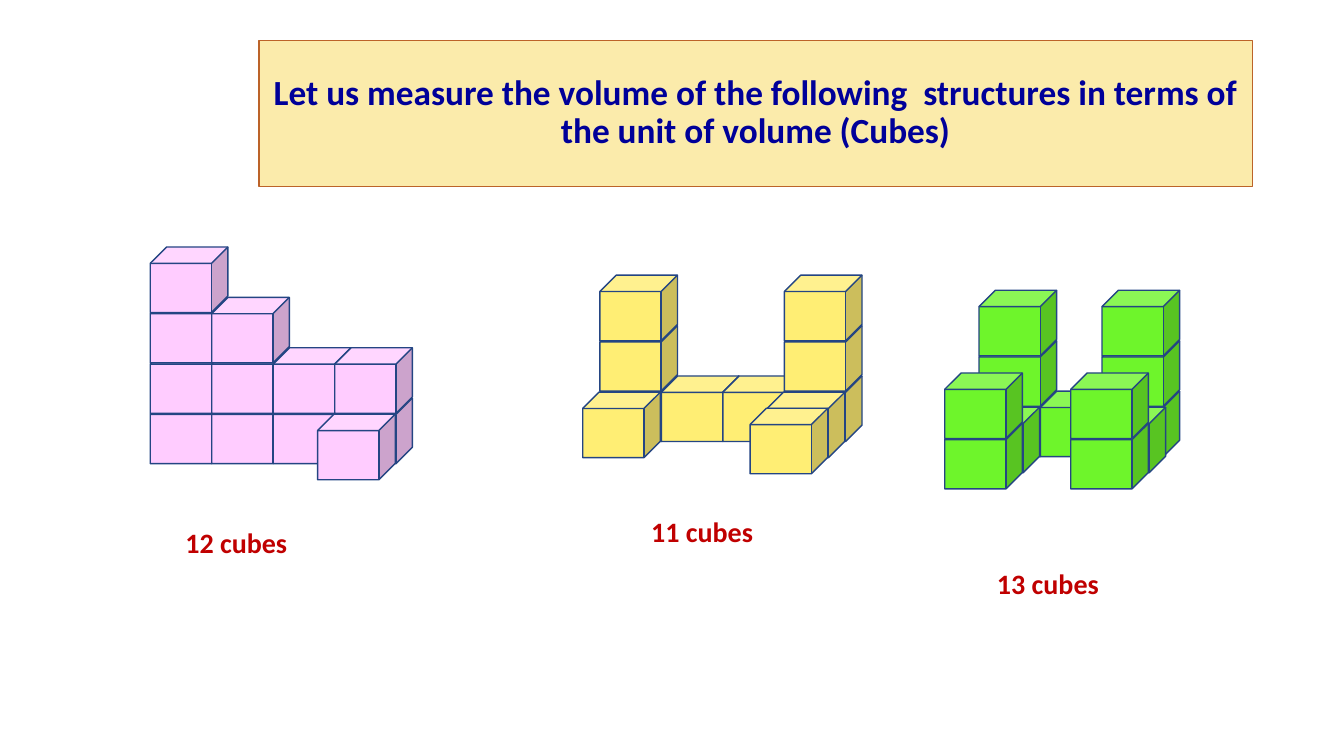
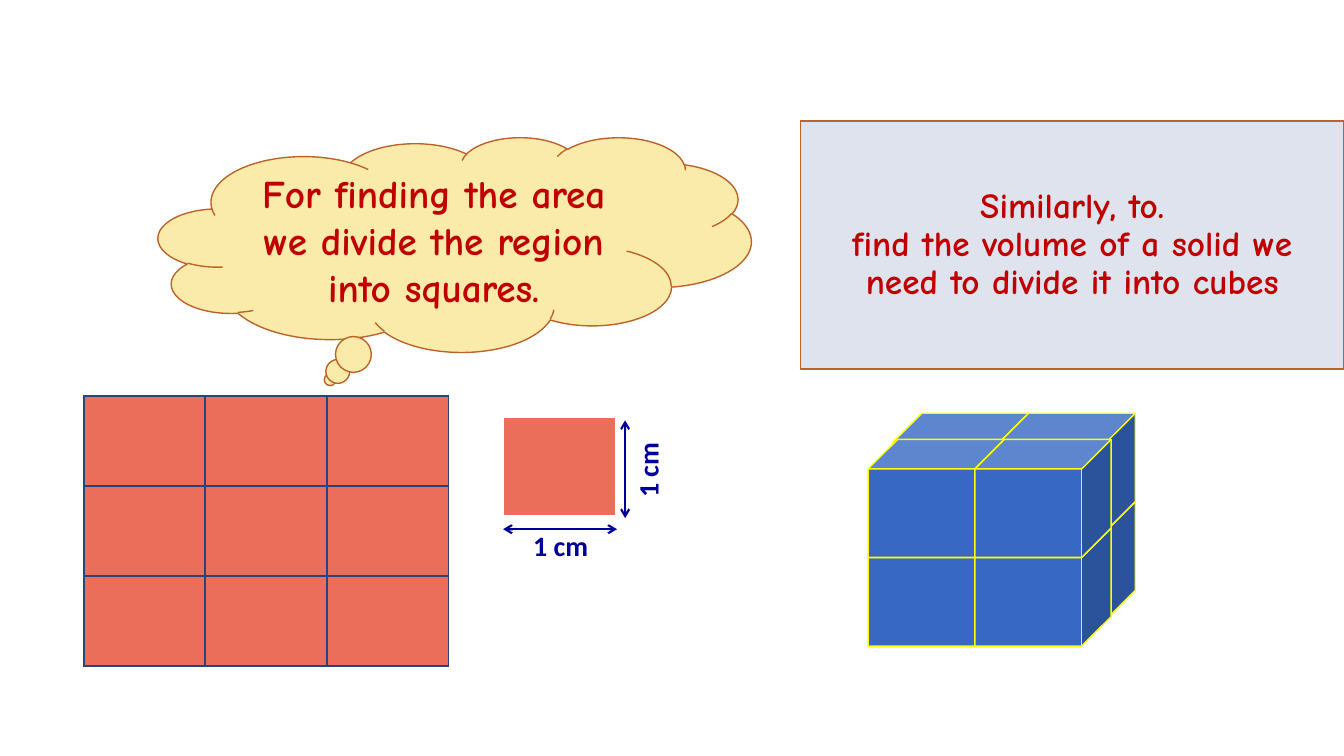
import pptx
import pptx.util
import pptx.dml.color
import pptx.enum.shapes
import pptx.enum.text
import pptx.oxml.ns
import lxml.etree

Inches = pptx.util.Inches
Pt = pptx.util.Pt
Shape = pptx.enum.shapes.MSO_SHAPE
Align = pptx.enum.text.PP_ALIGN
Anchor = pptx.enum.text.MSO_ANCHOR

COLORS = {
    "cream": "FBEBAB", "mist": "DFE3EE", "rust": "BC6329",
    "navy": "000099", "red": "C00000", "outline": "244583",
    "pink": "FFCCFF", "straw": "FFEE74", "green": "6EF52B",
    "blue": "3668C4", "yellow": "FFFF00", "coral": "EB6E5A",
    "white": "FFFFFF",
}
BODY_FONT, ROUND_FONT = "Calibri", "Comic Neue"
SLIDE_WIDTH, SLIDE_HEIGHT = 13.33, 7.5

# Cubes are (column, level, depth); depth grows toward the viewer.
SMALL_CUBE = {"size": (0.77, 0.65), "column": 0.61, "level": 0.5, "depth": (-0.17, 0.16)}
LARGE_CUBE = {"size": (1.35, 1.17), "column": 1.06, "level": 0.88, "depth": (-0.24, 0.26)}

STRUCTURES = [
    {"color": "pink", "origin": (1.49, 3.95), "label": "12 cubes", "label_at": (1.74, 5.16),
     "cubes": [(column, level, 0) for column, height in enumerate((4, 3, 2, 2))
               for level in range(height)] + [(3, 0, 1)]},
    {"color": "straw", "origin": (5.95, 3.73), "label": "11 cubes", "label_at": (6.36, 5.06),
     "cubes": [(column, level, 0) for column, height in enumerate((3, 1, 1, 3))
               for level in range(height)] + [(0, 0, 1), (3, 0, 1), (3, 0, 2)]},
    {"color": "green", "origin": (9.71, 3.88), "label": "13 cubes", "label_at": (9.79, 5.57),
     "cubes": [(column, level, 0) for column, height in enumerate((3, 1, 3))
               for level in range(height)]
              + [(column, level, depth) for column in (0, 2.05)
                 for level, depth in ((0, 1), (0, 2), (1, 2))]},
]
BLOCK = {"color": "blue", "origin": (8.85, 4.98),
         "cubes": [(column, level, depth) for column in (0, 1)
                   for level in (0, 1) for depth in (0, 1)]}

TITLES = [
    {"lines": ["Let us measure the volume of the following  structures in terms of "
               "the unit of volume (Cubes)"],
     "box": (2.57, 0.4, 9.85, 1.45), "fill": "cream", "font": BODY_FONT, "color": "navy"},
    {"lines": ["Similarly, to.", "find the volume of a solid we need to divide it into cubes"],
     "box": (7.94, 1.2, 5.39, 2.46), "fill": "mist", "font": ROUND_FONT, "color": "red"},
]
THOUGHT = "For finding the area we divide the region into squares."
UNIT_LABELS = [("1 cm", (5.19, 5.19), 0), ("1 cm", (6.02, 4.41), 270)]
UNIT_ARROWS = [((4.99, 5.25), (6.12, 5.25)), ((6.2, 5.14), (6.2, 4.17))]


def rgb(name):
    return pptx.dml.color.RGBColor.from_string(COLORS[name])


def lengths(values):
    return [Inches(value) for value in values]


def paint(shape, fill, line):
    shape.fill.solid()
    shape.fill.fore_color.rgb = rgb(fill)
    shape.line.color.rgb = rgb(line)
    shape.line.width = Pt(1)


def add_run(para, text, size, color, font=BODY_FONT):
    span = para.add_run()
    span.text = text
    span.font.name = font
    span.font.size = Pt(size)
    span.font.bold = True
    span.font.color.rgb = rgb(color)


def add_titled_slide(deck, title):
    page = deck.slides.add_slide(deck.slide_layouts[5])
    box = page.shapes.title
    box.left, box.top, box.width, box.height = lengths(title["box"])
    paint(box, title["fill"], "rust")
    frame = box.text_frame
    frame.word_wrap = True
    frame.auto_size = pptx.enum.text.MSO_AUTO_SIZE.NONE
    frame.vertical_anchor = Anchor.MIDDLE
    para = frame.paragraphs[0]
    para.alignment = Align.CENTER
    para.line_spacing = 0.9
    for index, line in enumerate(title["lines"]):
        if index:
            para.add_line_break()
        add_run(para, line, 25.2, title["color"], title["font"])
    return page


def add_structure(page, structure, cube, line):
    """Stack cubes from the bottom level up, and from back to front in each level."""
    left, top = structure["origin"]
    shift_x, shift_y = cube["depth"]
    for column, level, depth in sorted(structure["cubes"], key=lambda c: (c[1], c[2], c[0])):
        x = left + column * cube["column"] + depth * shift_x
        y = top - level * cube["level"] + depth * shift_y
        shape = page.shapes.add_shape(Shape.CUBE, *lengths((x, y, *cube["size"])))
        shape.shadow.inherit = False
        paint(shape, structure["color"], line)


def add_label(page, text, at, width, color, rotation=0):
    box = page.shapes.add_textbox(*lengths((*at, width, 0.44)))
    box.rotation = rotation
    box.text_frame.word_wrap = False
    add_run(box.text_frame.paragraphs[0], text, 20, color)


def add_border(cell, side, color, width):
    properties = cell._tc.get_or_add_tcPr()
    name = pptx.oxml.ns.qn
    border = lxml.etree.SubElement(properties, name("a:ln" + side), w=str(Pt(width)))
    fill = lxml.etree.SubElement(border, name("a:solidFill"))
    lxml.etree.SubElement(fill, name("a:srgbClr"), val=COLORS[color])


def add_squares(page, box, count, border, widths):
    """Draw count by count cells; widths gives the border points by side."""
    table = page.shapes.add_table(count, count, *lengths(box)).table
    table.first_row = table.horz_banding = False
    for column in table.columns:
        column.width = Inches(box[2] / count)
    for row in table.rows:
        row.height = Inches(box[3] / count)
    for cell in table.iter_cells():
        for side, width in widths.items():
            add_border(cell, side, border, width)
        cell.fill.solid()
        cell.fill.fore_color.rgb = rgb("coral")


def add_double_arrow(page, start, end):
    arrow = page.shapes.add_connector(pptx.enum.shapes.MSO_CONNECTOR.STRAIGHT,
                                      *lengths((*start, *end)))
    arrow.line.color.rgb = rgb("navy")
    arrow.line.width = Pt(1.5)
    line = arrow.line._get_or_add_ln()
    for tip in ("a:headEnd", "a:tailEnd"):
        lxml.etree.SubElement(line, pptx.oxml.ns.qn(tip), type="arrow")
    lxml.etree.SubElement(arrow._element.spPr, pptx.oxml.ns.qn("a:effectLst"))


def add_thought(page):
    cloud = page.shapes.add_shape(Shape.CLOUD_CALLOUT, *lengths((1.57, 1.36, 5.88, 2.13)))
    cloud.shadow.inherit = False
    cloud.adjustments[0], cloud.adjustments[1] = -0.21, 0.63
    paint(cloud, "cream", "rust")
    frame = cloud.text_frame
    frame.word_wrap = True
    frame.vertical_anchor = Anchor.MIDDLE
    frame.paragraphs[0].alignment = Align.CENTER
    add_run(frame.paragraphs[0], THOUGHT, 28, "red", ROUND_FONT)


def main():
    deck = pptx.Presentation()
    deck.slide_width, deck.slide_height = lengths((SLIDE_WIDTH, SLIDE_HEIGHT))
    volume_page, cubes_page = [add_titled_slide(deck, title) for title in TITLES]

    for structure in STRUCTURES:
        add_structure(volume_page, structure, SMALL_CUBE, "outline")
        add_label(volume_page, structure["label"], structure["label_at"], 1.33, "red")

    add_structure(cubes_page, BLOCK, LARGE_CUBE, "yellow")
    add_squares(cubes_page, (0.83, 3.93, 3.62, 2.68), 3, "outline", dict.fromkeys("LRTB", 1.5))
    add_squares(cubes_page, (4.99, 4.14, 1.12, 0.99), 1, "white", {"L": 1, "R": 1, "T": 1, "B": 3})
    for text, at, rotation in UNIT_LABELS:
        add_label(cubes_page, text, at, 0.81, "navy", rotation)
    for start, end in UNIT_ARROWS:
        add_double_arrow(cubes_page, start, end)
    add_thought(cubes_page)

    deck.save("out.pptx")


if __name__ == "__main__":
    main()
